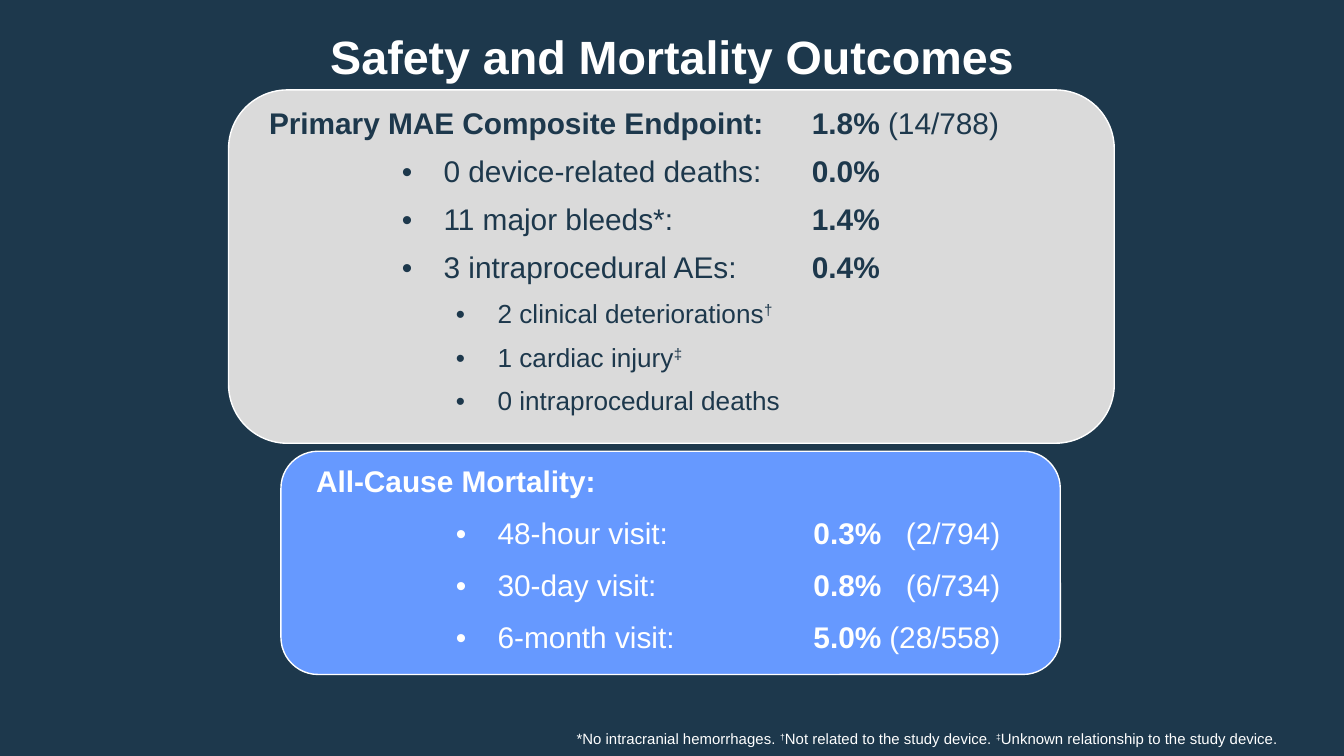
from itertools import groupby
from lxml.etree import SubElement
from pptx import Presentation
from pptx.dml.color import RGBColor
from pptx.enum.shapes import MSO_SHAPE
from pptx.enum.text import MSO_ANCHOR, MSO_AUTO_SIZE, PP_ALIGN
from pptx.oxml.ns import qn
from pptx.util import Cm, Pt

COLORS = {"navy": "1D384C", "white": "FFFFFF", "gray": "DADADA", "blue": "6699FF"}
PLAIN_STYLE = "{2D5ABB26-0587-4C30-8999-92F81FD0307C}"
MARKS = "†‡"


def rgb(name):
    return RGBColor.from_string(COLORS[name])


class Deck:
    face = "Arial"
    hang = 0.79

    def __init__(self, wide, high):
        self.prs = Presentation()
        self.prs.slide_width, self.prs.slide_height = Cm(wide), Cm(high)
        self.slide = self.prs.slides.add_slide(self.prs.slide_layouts[5])
        fill = self.slide.background.fill
        fill.solid()
        fill.fore_color.rgb = rgb("navy")

    def label(self, para, parts, size, color):
        """Fill a paragraph from (text, bold) parts, raising reference marks."""
        font = para.font
        font.name, font.size, font.color.rgb = self.face, Pt(size), rgb(color)
        weights = {bold for _, bold in parts}
        if len(weights) == 1:
            font.bold = weights.pop()
        for text, bold in parts:
            for raised, chars in groupby(text, lambda char: char in MARKS):
                run = para.add_run()
                run.text = "".join(chars)
                if font.bold is None:
                    run.font.bold = bold
                if raised:
                    run._r.get_or_add_rPr().set("baseline", "30000")

    def title(self, text, left, top, wide, high):
        box = self.slide.shapes.title
        box.left, box.top, box.width, box.height = map(Cm, (left, top, wide, high))
        frame = box.text_frame
        frame.auto_size = MSO_AUTO_SIZE.NONE
        frame.vertical_anchor = MSO_ANCHOR.MIDDLE
        para = frame.paragraphs[0]
        para.alignment = PP_ALIGN.CENTER
        para.line_spacing = 0.9
        self.label(para, [(text, True)], 25, "white")

    def card(self, color, left, top, wide, high):
        card = self.slide.shapes.add_shape(
            MSO_SHAPE.ROUNDED_RECTANGLE, *map(Cm, (left, top, wide, high)))
        card.shadow.inherit = False
        card.fill.solid()
        card.fill.fore_color.rgb = rgb(color)
        card.line.color.rgb = rgb("white")
        card.line.width = Pt(0.75)

    def bullet(self, para, indent):
        props = para._p.get_or_add_pPr()
        props.set("marL", str(Cm(indent)))
        props.set("indent", str(-Cm(self.hang)))
        SubElement(props, qn("a:buFont"), typeface=self.face)
        SubElement(props, qn("a:buChar"), char="•")

    def tab(self, para, place):
        tabs = SubElement(para._p.get_or_add_pPr(), qn("a:tabLst"))
        SubElement(tabs, qn("a:tab"), pos=str(Cm(place)), algn="r")

    def table(self, rows, color, left, top, cols, highs):
        """Each row holds indent, size, label parts and value parts."""
        grid = self.slide.shapes.add_table(
            len(rows), len(cols), Cm(left), Cm(top), Cm(sum(cols)), Cm(sum(highs))).table
        grid.first_row = grid.horz_banding = False
        grid._tbl.tblPr.find(qn("a:tableStyleId")).text = PLAIN_STYLE
        for col, wide in zip(grid.columns, cols):
            col.width = Cm(wide)
        for line, high, (indent, size, *cells) in zip(grid.rows, highs, rows):
            line.height = Cm(high)
            for index, (cell, parts) in enumerate(zip(line.cells, cells)):
                cell.fill.background()
                cell.margin_top = Cm(0.12 if parts else 0)
                cell.margin_bottom = 0
                para = cell.text_frame.paragraphs[0]
                if indent and index == 0:
                    self.bullet(para, indent)
                if any("\t" in text for text, _ in parts):
                    self.tab(para, 3.53)
                self.label(para, parts, size, color)

    def note(self, text, left, top, wide, high):
        box = self.slide.shapes.add_textbox(*map(Cm, (left, top, wide, high)))
        box.text_frame.word_wrap = True
        para = box.text_frame.paragraphs[0]
        para.alignment = PP_ALIGN.RIGHT
        self.label(para, [(text, False)], 8, "white")


def main():
    deck = Deck(25.4, 14.29)
    deck.title("Safety and Mortality Outcomes", 1.9, 0.33, 21.6, 1.57)

    events = [("0 device-related deaths:", "0.0%"),
              ("11 major bleeds*:", "1.4%"),
              ("3 intraprocedural AEs:", "0.4%")]
    details = ["2 clinical deteriorations†", "1 cardiac injury‡",
               "0 intraprocedural deaths"]
    safety = [(0, 16, [("Primary MAE Composite Endpoint:", True)],
               [("1.8% ", True), ("(14/788)", False)])]
    safety += [(3.3, 16, [(event, False)], [(rate, True)]) for event, rate in events]
    safety += [(4.32, 14, [(detail, False)], []) for detail in details]
    deck.card("gray", 4.32, 1.7, 16.74, 6.68)
    deck.table(safety, "navy", 4.83, 1.91, [10.26, 5.46], [0.91] * 4 + [0.82] * 3)

    visits = [("48-hour visit:", "0.3%", "(2/794)"),
              ("30-day visit:", "0.8%", "(6/734)"),
              ("6-month visit:", "5.0%", "(28/558)")]
    deaths = [(0, 16, [("All-Cause Mortality:", True)], [])]
    deaths += [(3.43, 16, [(visit, False)], [(rate, True), ("\t" + count, False)])
               for visit, rate, count in visits]
    deck.card("blue", 5.31, 8.53, 14.73, 4.22)
    deck.table(deaths, "white", 5.72, 8.69, [9.4, 4.57], [0.98] * 4)

    deck.note("*No intracranial hemorrhages. †Not related to the study device. "
              "‡Unknown relationship to the study device.", 10.13, 13.67, 14.27, 0.61)
    deck.prs.save("out.pptx")


if __name__ == "__main__":
    main()
